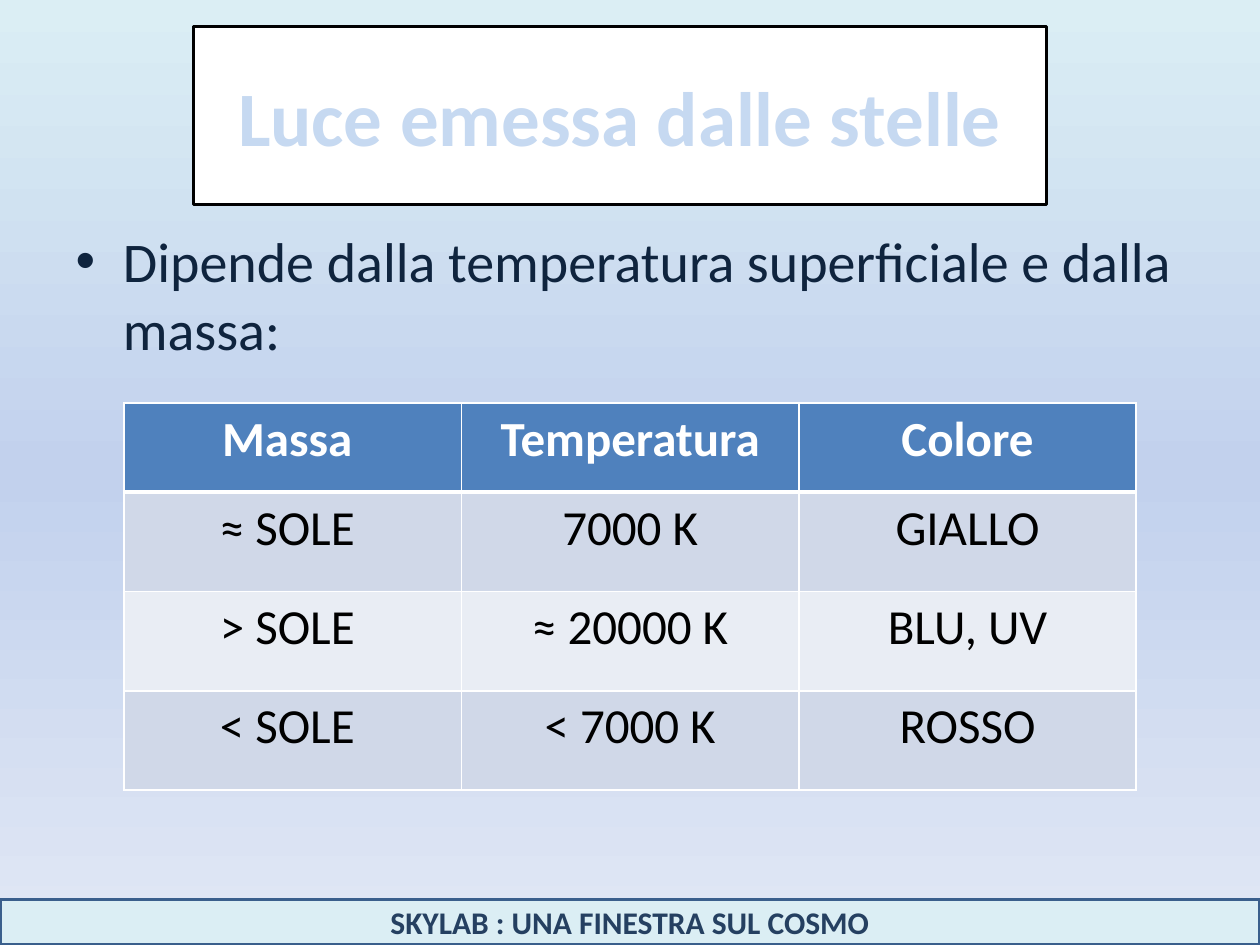
from copy import deepcopy
from lxml.etree import SubElement as Sub
from pptx import Presentation
from pptx.dml.color import RGBColor as RGB
from pptx.enum.shapes import MSO_SHAPE as Kind
from pptx.enum.text import MSO_ANCHOR as Anchor, PP_ALIGN as Align
from pptx.oxml.ns import qn
from pptx.util import Pt


def color(code):
    return RGB.from_string(code)


def stroke(parent, tag, code, width):
    """Add a solid line element to the parent."""
    line = Sub(parent, qn(tag), w=str(Pt(width)))
    Sub(Sub(line, qn("a:solidFill")), qn("a:srgbClr"), val=code)
    return line


class Deck:
    font = "Calibri"
    white, navy, pale = "FFFFFF", "0F243E", "DBEEF4"
    head, bands = "4F81BD", ("D0D8E8", "E9EDF4")

    def __init__(self, wide, high):
        self.prs = Presentation()
        self.prs.slide_width, self.prs.slide_height = Pt(wide), Pt(high)
        self.slide = self.prs.slides.add_slide(self.prs.slide_layouts[1])

    def back(self, codes):
        """Fill the background with evenly spaced colours, top to bottom."""
        fill = self.slide.background.fill
        fill.gradient()
        fill.gradient_angle = 270
        stops = self.slide.element.find(".//" + qn("a:gsLst"))
        while len(stops) < len(codes):
            stops.append(deepcopy(stops[0]))
        for i, (stop, code) in enumerate(zip(fill.gradient_stops, codes)):
            stop.color.rgb = color(code)
            stop.position = i / (len(codes) - 1)

    def place(self, shape, box):
        for name, value in zip(("left", "top", "width", "height"), box):
            setattr(shape, name, Pt(value))

    def paint(self, shape, fill, line, width):
        shape.fill.solid()
        shape.fill.fore_color.rgb = color(fill)
        shape.line.color.rgb = color(line)
        shape.line.width = Pt(width)

    def label(self, frame, text, size, code, bold=False, align=None, edge=None):
        para = frame.paragraphs[0]
        para.alignment = align
        run = para.add_run()
        run.text = text
        style = {"name": self.font, "size": Pt(size), "bold": bold}
        for name, value in style.items():
            setattr(run.font, name, value)
        run.font.color.rgb = color(code)
        if edge:
            # The outline must come first in the run properties
            props = run._r.get_or_add_rPr()
            props.insert(0, stroke(props, "a:ln", *edge))

    def title(self, text, box):
        shape = self.slide.shapes.title
        self.place(shape, box)
        self.paint(shape, self.white, "000000", 1.75)
        shape.text_frame.vertical_anchor = Anchor.MIDDLE
        self.label(shape.text_frame, text, 44, "C6D9F1", True, Align.CENTER,
                   ("376092", 1))

    def body(self, text, box):
        shape = self.slide.placeholders[1]
        self.place(shape, box)
        self.label(shape.text_frame, text, 32, self.navy,
                   edge=(self.navy, 0.75))

    def band(self, text, box):
        shapes = self.slide.shapes
        shape = shapes.add_shape(Kind.RECTANGLE, *map(Pt, box))
        shape.shadow.inherit = False
        self.paint(shape, self.pale, "3A5F8C", 2)
        shape.text_frame.vertical_anchor = Anchor.MIDDLE
        self.label(shape.text_frame, text, 18, "254061", True, Align.CENTER)
        shapes.title.element.addprevious(shape.element)

    def table(self, rows, box, highs):
        grid = self.slide.shapes.add_table(
            len(rows), len(rows[0]), *map(Pt, box)).table
        for r, (row, high) in enumerate(zip(rows, highs)):
            grid.rows[r].height = Pt(high)
            for c, text in enumerate(row):
                self.cell(grid.cell(r, c), r, text)

    def cell(self, cell, row, text):
        top = row == 0
        self.label(cell.text_frame, text, 28, self.white if top else "000000",
                   top, Align.CENTER)
        # Borders come before the fill; the rule under the header is thicker
        props = cell._tc.get_or_add_tcPr()
        widths = {"L": 1, "R": 1, "T": 3 if row == 1 else 1, "B": 3 if top else 1}
        for side, width in widths.items():
            stroke(props, "a:ln" + side, self.white, width)
        cell.fill.solid()
        cell.fill.fore_color.rgb = color(
            self.head if top else self.bands[(row - 1) % 2])


def main():
    deck = Deck(720, 540)
    deck.back([deck.pale, "C2D1ED", "E1E8F5"])

    # Footer band, title and opening point
    deck.band("SKYLAB : UNA FINESTRA SUL COSMO", (0, 514, 720, 26))
    deck.title("Luce emessa dalle stelle", (110.6, 15, 487.6, 102))
    deck.body("Dipende dalla temperatura superficiale e dalla massa:",
              (36, 126, 648, 356.4))

    # Star mass, temperature and colour
    rows = [
        ("Massa ", "Temperatura", "Colore"),
        ("≈ SOLE ", "7000 K", "GIALLO"),
        ("> SOLE ", "≈ 20000 K", "BLU, UV"),
        ("< SOLE ", "< 7000 K", "ROSSO"),
    ]
    deck.table(rows, (70.9, 230.4, 578.4, 221.2), [50.8] + [56.8] * 3)
    deck.prs.save("out.pptx")


if __name__ == "__main__":
    main()
